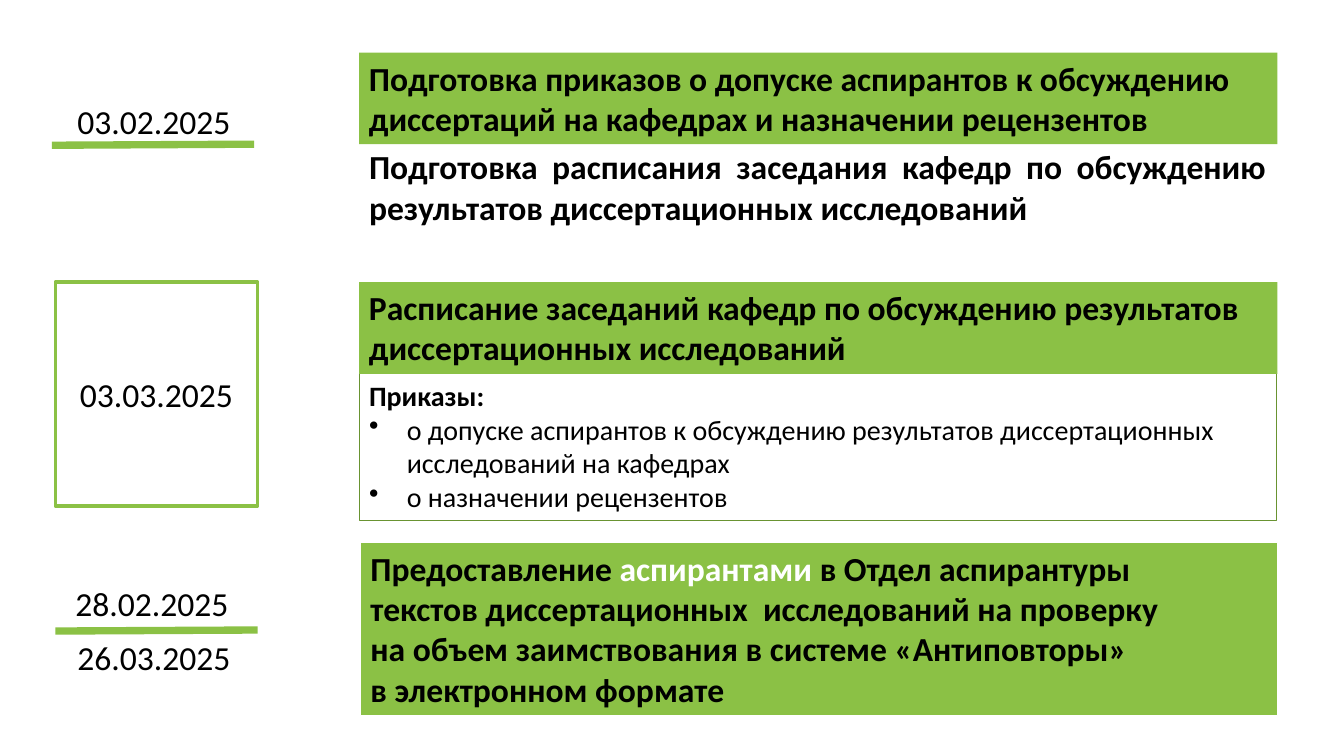
import pptx
import pptx.dml.color
import pptx.enum.shapes
import pptx.enum.text
import pptx.oxml
import pptx.oxml.ns
import pptx.util

Pt = pptx.util.Pt
ALIGN = pptx.enum.text.PP_ALIGN
ANCHOR = pptx.enum.text.MSO_ANCHOR
COLOURS = {"green": "8BC145", "dark green": "699331", "black": "000000", "white": "FFFFFF"}
FONT = "Calibri"
TASK_LEFT, TASK_WIDTH = 256.5, 656
DATE_LEFT, DATE_WIDTH = 39.5, 144.5


def colour(name):
    """Return the named colour."""
    return pptx.dml.color.RGBColor.from_string(COLOURS[name])


def add_spans(para, spans, size, bold):
    """Add (text, overrides) spans to a paragraph, breaking at line ends."""
    for text, changes in spans:
        for index, part in enumerate(text.split("\n")):
            if index:
                para.add_line_break()
            span = para.add_run()
            span.text = part
            span.font.name = FONT
            span.font.size = Pt(changes.get("size", size))
            span.font.bold = bold
            span.font.color.rgb = colour(changes.get("colour", "black"))


def add_bullet(para, indent):
    """Give a paragraph a round bullet with a hanging indent."""
    properties = para._p.get_or_add_pPr()
    properties.set("marL", str(Pt(indent)))
    properties.set("indent", str(-Pt(indent)))
    bullet = pptx.oxml.parse_xml(
        f'<a:buChar {pptx.oxml.ns.nsdecls("a")} char="•"/>')
    properties.append(bullet)


def write(shape, paragraphs, size=24, align=ALIGN.LEFT, anchor=ANCHOR.TOP):
    """Fill a shape with (spans, bold, bulleted) paragraphs."""
    frame = shape.text_frame
    frame.word_wrap = True
    frame.vertical_anchor = anchor
    for index, (spans, bold, bulleted) in enumerate(paragraphs):
        para = frame.add_paragraph() if index else frame.paragraphs[0]
        para.alignment = align
        add_spans(para, spans, size, bold)
        if bulleted:
            add_bullet(para, 27)


def add_panel(page, box, fill=None, line=None, line_width=0.75):
    """Draw a flat rectangle with optional fill and outline."""
    panel = page.shapes.add_shape(
        pptx.enum.shapes.MSO_SHAPE.RECTANGLE, *map(Pt, box))
    panel.shadow.inherit = False
    if fill:
        panel.fill.solid()
        panel.fill.fore_color.rgb = colour(fill)
    else:
        panel.fill.background()
    if line:
        panel.line.color.rgb = colour(line)
        panel.line.width = Pt(line_width)
    else:
        panel.line.fill.background()
    return panel


def add_heading(page, box, spans, line=None):
    """Draw a green task heading in bold."""
    write(add_panel(page, box, "green", line), [(spans, True, False)])


def add_label(page, box, spans, bold=False, align=ALIGN.LEFT):
    """Place unframed text in a box."""
    label = page.shapes.add_textbox(*map(Pt, box))
    write(label, [(spans, bold, False)], align=align)


def add_underline(page, left, top):
    """Draw the thick, slightly rising green line beside a date."""
    line = page.shapes.add_connector(
        pptx.enum.shapes.MSO_CONNECTOR.STRAIGHT,
        Pt(left), Pt(top), Pt(left + DATE_WIDTH), Pt(top - 0.75))
    line.line.color.rgb = colour("green")
    line.line.width = Pt(5.25)
    line._element.spPr.append(
        pptx.oxml.parse_xml(f'<a:effectLst {pptx.oxml.ns.nsdecls("a")}/>'))


def add_preparation(page, top):
    """Place the February preparation stage."""
    add_label(page, (DATE_LEFT + 8.75, top + 23, 208, 46),
              [("03.02.2025", {}), (" ", {"size": 32})])
    add_underline(page, DATE_LEFT - 2.5, top + 66.25)
    add_label(page, (TASK_LEFT, top + 63.5, TASK_WIDTH - 1, 65.5),
              [("Подготовка расписания заседания кафедр по обсуждению "
                "результатов диссертационных исследований", {})],
              bold=True, align=ALIGN.JUSTIFY)
    add_heading(page, (TASK_LEFT, top, TASK_WIDTH, 65.5),
                [("Подготовка приказов о допуске аспирантов к обсуждению "
                  "диссертаций на кафедрах и назначении рецензентов", {})])


def add_meetings(page, top):
    """Place the March meetings stage with its list of orders."""
    orders = add_panel(page, (TASK_LEFT, top + 65.5, TASK_WIDTH - 1, 104.5),
                       line="dark green")
    write(orders, [
        ([("Приказы:", {})], True, False),
        ([("о допуске аспирантов к обсуждению результатов "
           "диссертационных исследований на кафедрах", {})], False, True),
        ([("о назначении рецензентов", {})], False, True),
    ], size=20)
    date = add_panel(page, (DATE_LEFT, top, DATE_WIDTH, 160),
                     "white", "green", 2.25)
    write(date, [([("03.03.2025", {})], False, False)],
          align=ALIGN.CENTER, anchor=ANCHOR.MIDDLE)
    add_heading(page, (TASK_LEFT, top, TASK_WIDTH, 65.5),
                [("Расписание заседаний кафедр по обсуждению результатов "
                  "диссертационных исследований", {})])


def add_checking(page, top):
    """Place the text checking stage with its two dates."""
    add_heading(page, (TASK_LEFT + 1, top, TASK_WIDTH - 1, 123.5), [
        ("Предоставление ", {}),
        ("аспирантами", {"colour": "white"}),
        (" в Отдел аспирантуры\n"
         "текстов диссертационных  исследований на проверку\n"
         "на объем заимствования в системе «Антиповторы»\n"
         "в электронном формате", {}),
    ], line="white")
    add_label(page, (DATE_LEFT, top + 17.25, DATE_WIDTH, 46),
              [(" ", {"size": 32}), ("28.02.2025", {})])
    add_underline(page, DATE_LEFT, top + 63.25)
    add_label(page, (DATE_LEFT + 8.75, top + 64, 125, 36),
              [("26.03.2025", {})])


def main():
    """Build and save the schedule."""
    deck = pptx.Presentation()
    deck.slide_width, deck.slide_height = Pt(960), Pt(540)
    page = deck.slides.add_slide(deck.slide_layouts[6])
    add_preparation(page, 37.5)
    add_meetings(page, 201.5)
    add_checking(page, 387.5)
    deck.save("out.pptx")


if __name__ == "__main__":
    main()
